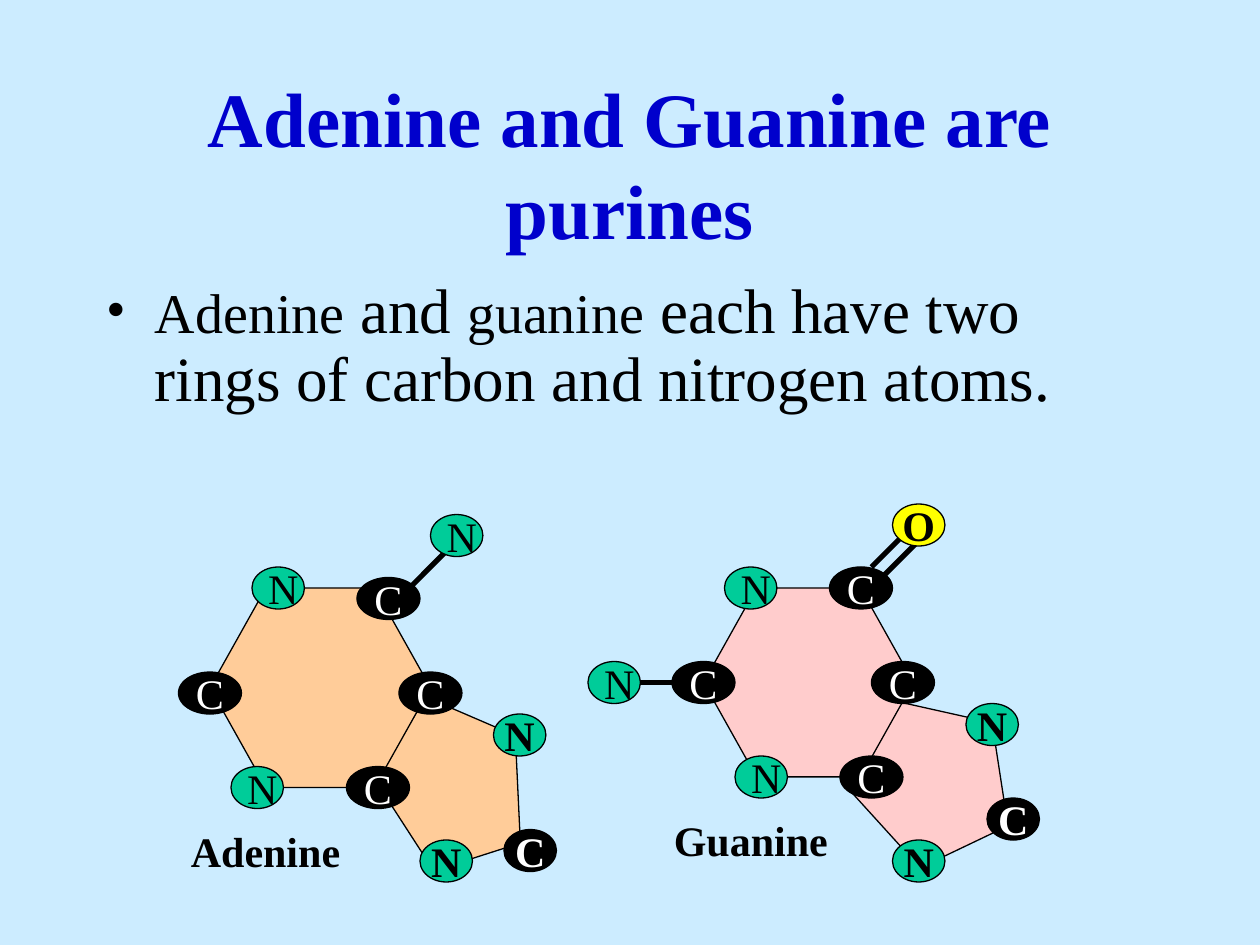
from dataclasses import dataclass

from lxml.etree import SubElement
from pptx import Presentation
from pptx.dml.color import RGBColor
from pptx.enum.shapes import MSO_CONNECTOR, MSO_SHAPE
from pptx.enum.text import MSO_ANCHOR, PP_ALIGN
from pptx.oxml.ns import qn
from pptx.util import Inches, Pt

COLORS = {
    "background": "CCECFF",
    "title": "0000CC",
    "black": "000000",
    "white": "FFFFFF",
    "nitrogen": "00CC99",
    "oxygen": "FFFF00",
    "adenine": "FFCC99",
    "guanine": "FFCCCC",
}
FONT = "Times New Roman"
CELL = Inches(1) / 12
COLUMNS, ROWS = 120, 90
ATOM_ROWS = 4
LABEL_COLUMNS, LABEL_ROWS = 18, 6


@dataclass
class Ring:
    column: float
    row: float
    columns: float
    rows: float
    turn: float = 0
    slant: float = 0


@dataclass
class Atom:
    symbol: str
    column: float
    row: float
    columns: float = 5
    bold: bool = False


@dataclass
class Bond:
    start: tuple[float, float]
    end: tuple[float, float]


@dataclass
class Base:
    name: str
    label_cell: tuple[float, float]
    color: str
    pentagon: Ring
    hexagon: Ring
    bonds: list[Bond]
    atoms: list[Atom]


ATOM_COLORS = {
    "C": ("black", "white"),
    "N": ("nitrogen", "black"),
    "O": ("oxygen", "black"),
}

BASES = [
    Base(
        "Adenine", (17, 78), "adenine",
        Ring(36, 66, 14, 16, turn=342.2),
        Ring(20, 56, 21, 19, slant=0.28),
        [Bond((39, 56), (43, 52))],
        [
            Atom("C", 34, 55, 6), Atom("C", 38, 64, 6),
            Atom("C", 33, 73, 6), Atom("C", 17, 64, 6),
            Atom(" N", 24, 54), Atom(" N", 22, 73), Atom(" N", 41, 49),
            Atom("N", 40, 80, bold=True), Atom("N", 47, 68, bold=True),
            Atom("C", 48, 79, bold=True),
        ],
    ),
    Base(
        "Guanine", (63, 77), "guanine",
        Ring(81, 66, 15, 15.4, turn=334.5),
        Ring(67, 56, 20, 18, slant=0.28),
        [
            Bond((83, 54), (87, 50)),
            Bond((64, 65), (61, 65)),
            Bond((84, 55), (88, 51)),
        ],
        [
            Atom("C", 79, 54, 6), Atom("C", 83, 63, 6),
            Atom("C", 80, 72, 6), Atom("C", 64, 63, 6),
            Atom(" N", 70, 72), Atom(" N", 69, 54),
            Atom("O", 85, 48, bold=True), Atom(" N", 56, 63),
            Atom("N", 85, 80, bold=True), Atom("N", 92, 67, bold=True),
            Atom("C", 94, 76, bold=True),
        ],
    ),
]


def cells(*counts: float) -> list[int]:
    return [round(count * CELL) for count in counts]


def rgb(color: str) -> RGBColor:
    return RGBColor.from_string(COLORS[color])


def set_all(target, formats: dict) -> None:
    for attribute, value in formats.items():
        setattr(target, attribute, value)


def add_run(paragraph, text: str, size: float, color: str = "black", bold: bool = False) -> None:
    run = paragraph.add_run()
    run.text = text
    set_all(run.font, {"name": FONT, "size": Pt(size), "bold": bold})
    run.font.color.rgb = rgb(color)


def draw_outline(shapes, kind: MSO_SHAPE, box: list[int], fill: str):
    outline = shapes.add_shape(kind, *box)
    outline.shadow.inherit = False
    outline.fill.solid()
    outline.fill.fore_color.rgb = rgb(fill)
    outline.line.color.rgb = rgb("black")
    outline.line.width = Pt(0.75)
    return outline


def draw_ring(shapes, kind: MSO_SHAPE, ring: Ring, fill: str) -> None:
    box = cells(ring.column, ring.row, ring.columns, ring.rows)
    outline = draw_outline(shapes, kind, box, fill)
    outline.rotation = ring.turn
    if ring.slant:
        outline.adjustments[0] = ring.slant


def draw_bond(shapes, bond: Bond) -> None:
    line = shapes.add_connector(MSO_CONNECTOR.STRAIGHT, *cells(*bond.start, *bond.end))
    line.line.color.rgb = rgb("black")
    line.line.width = Pt(3)
    SubElement(line._element.spPr, qn("a:effectLst"))


def draw_atom(shapes, atom: Atom) -> None:
    fill, ink = ATOM_COLORS[atom.symbol.strip()]
    box = cells(atom.column, atom.row, atom.columns, ATOM_ROWS)
    frame = draw_outline(shapes, MSO_SHAPE.OVAL, box, fill).text_frame
    set_all(frame, {"word_wrap": False, "vertical_anchor": MSO_ANCHOR.MIDDLE})
    frame.paragraphs[0].alignment = PP_ALIGN.CENTER
    add_run(frame.paragraphs[0], atom.symbol, 24, ink, atom.bold)


def draw_base(slide, base: Base) -> None:
    shapes = slide.shapes.add_group_shape().shapes
    draw_ring(shapes, MSO_SHAPE.REGULAR_PENTAGON, base.pentagon, base.color)
    draw_ring(shapes, MSO_SHAPE.HEXAGON, base.hexagon, base.color)
    for bond in base.bonds:
        draw_bond(shapes, bond)
    for atom in base.atoms:
        draw_atom(shapes, atom)
    label = shapes.add_textbox(*cells(*base.label_cell, LABEL_COLUMNS, LABEL_ROWS)).text_frame
    label.word_wrap = True
    add_run(label.paragraphs[0], base.name, 24, bold=True)


def draw_title(slide) -> None:
    frame = slide.shapes.add_textbox(*cells(9, 8, 102, 15)).text_frame
    set_all(frame, {"word_wrap": True, "vertical_anchor": MSO_ANCHOR.MIDDLE})
    frame.paragraphs[0].alignment = PP_ALIGN.CENTER
    add_run(frame.paragraphs[0], "Adenine and Guanine are purines", 44, "title", True)


def draw_statement(slide) -> None:
    frame = slide.shapes.add_textbox(*cells(9, 26, 102, 18)).text_frame
    frame.word_wrap = True
    paragraph = frame.paragraphs[0]
    properties = paragraph._p.get_or_add_pPr()
    properties.set("marL", str(Inches(0.38)))
    properties.set("indent", str(Inches(-0.38)))
    paragraph.line_spacing = 0.9
    SubElement(properties, qn("a:buFont")).set("typeface", FONT)
    SubElement(properties, qn("a:buChar")).set("char", "•")
    for text, size in [
        ("Adenine", 32), (" and ", 36), ("guanine", 32),
        (" each have two rings of carbon and nitrogen atoms.", 36),
    ]:
        add_run(paragraph, text, size)


def main() -> None:
    deck = Presentation()
    set_all(deck, dict(zip(("slide_width", "slide_height"), cells(COLUMNS, ROWS))))
    slide = deck.slides.add_slide(deck.slide_layouts[6])
    slide.background.fill.solid()
    slide.background.fill.fore_color.rgb = rgb("background")
    draw_title(slide)
    draw_statement(slide)
    for base in BASES:
        draw_base(slide, base)
    deck.save("out.pptx")


if __name__ == "__main__":
    main()
